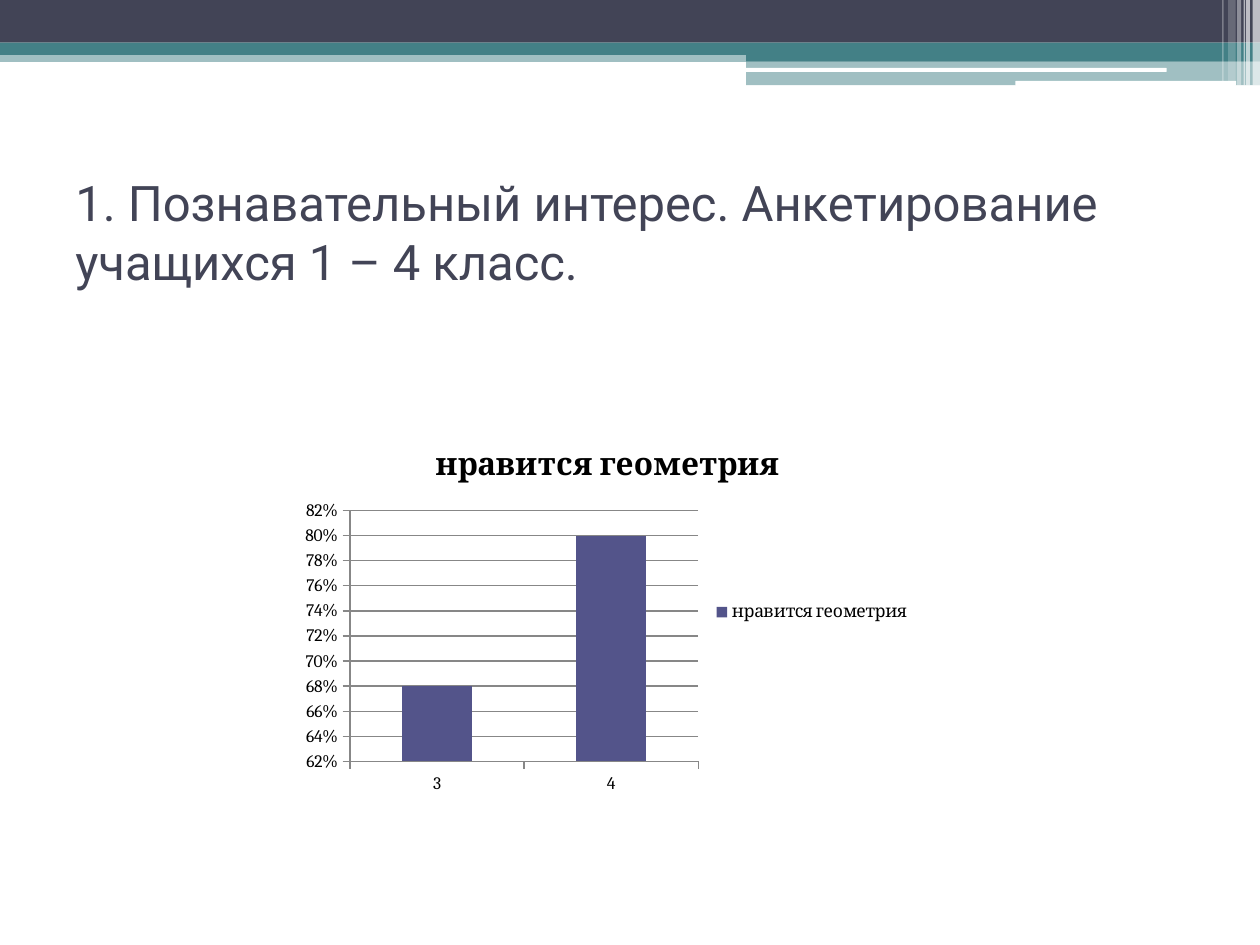
from dataclasses import dataclass

from lxml import etree
from pptx import Presentation, util as u
from pptx.chart.data import CategoryChartData
from pptx.dml.color import RGBColor
from pptx.enum import chart as ch, shapes, text
from pptx.oxml.ns import qn


@dataclass(frozen=True)
class Theme:
    dark: str = "424456"
    teal: str = "438086"
    white: str = "FFFFFF"
    black: str = "000000"
    bar: str = "53548A"
    grid: str = "878787"
    head: str = "Roboto"
    body: str = "Cambria"
    head_pt: int = 28
    name_pt: int = 18
    axis_pt: int = 10


T = Theme()


def rgb(code):
    return RGBColor.from_string(code)


def style(font, face, size, color, bold=False):
    font.name, font.size, font.bold = face, u.Pt(size), bold
    font.color.rgb = rgb(color)


def block(slide, box, color, alpha=100, kind=shapes.MSO_SHAPE.RECTANGLE):
    """Add a plain filled shape; alpha is its opacity in percent."""
    shape = slide.shapes.add_shape(kind, *map(u.Cm, box))
    shape.shadow.inherit = False
    shape.line.fill.background()
    shape.fill.solid()
    shape.fill.fore_color.rgb = rgb(color)
    if alpha < 100:
        tint = shape.fill._xPr.find(".//" + qn("a:srgbClr"))
        etree.SubElement(tint, qn("a:alpha")).set("val", str(alpha * 1000))


def banner(slide, x, y, w):
    """Stack the bands, the step on the right and the light stripes."""
    step, half = x + 15.04, w - 15.04
    block(slide, (x, y + 1.02, w, 0.23), T.teal, 50)
    block(slide, (x, y, w, 0.86), T.dark)
    block(slide, (x, y + 0.86, w, 0.25), T.teal)
    block(slide, (step, y + 0.99, half, 0.24), T.teal)
    block(slide, (step, y + 1.22, half, 0.5), T.teal, 50)
    for left, top, wide, high in ((15.01, 1.37, 8.51, 0.08),
                                  (20.47, 1.63, 4.45, 0.1)):
        block(slide, (x + left, y + top, wide, high), T.white,
              kind=shapes.MSO_SHAPE.ROUNDED_RECTANGLE)
    for gap, wide, high, alpha in (
            (0.15, 0.15, 1.73, 65), (0.28, 0.08, 1.73, 65),
            (0.33, 0.03, 1.73, 60), (0.46, 0.08, 1.73, 40),
            (0.64, 0.15, 1.63, 20), (0.76, 0.03, 1.63, 30)):
        block(slide, (x + w - gap, y, wide, high), T.white, alpha)


def title(slide, box, words):
    frame = slide.shapes.add_textbox(*map(u.Cm, box)).text_frame
    frame.word_wrap = True
    frame.vertical_anchor = text.MSO_ANCHOR.MIDDLE
    par = frame.paragraphs[0]
    par.text = words
    style(par.font, T.head, T.head_pt, T.dark)


def survey(slide, box, name, marks):
    """Draw the share of pupils by class as columns."""
    data = CategoryChartData(number_format="0%")
    data.categories = list(marks)
    data.add_series(name, marks.values())
    chart = slide.shapes.add_chart(
        ch.XL_CHART_TYPE.COLUMN_CLUSTERED, *map(u.Cm, box), data).chart
    style(chart.font, T.body, T.axis_pt, T.black)

    chart.has_title = True
    par = chart.chart_title.text_frame.paragraphs[0]
    par.text = name
    style(par.font, T.body, T.name_pt, T.black, True)
    chart.chart_title.include_in_layout = False

    chart.has_legend = True
    chart.legend.position = ch.XL_LEGEND_POSITION.RIGHT
    chart.legend.include_in_layout = False

    plot = chart.plots[0]
    plot.gap_width, plot.vary_by_categories = 150, False
    fill = plot.series[0].format.fill
    fill.solid()
    fill.fore_color.rgb = rgb(T.bar)

    rows = chart.value_axis
    rows.minimum_scale, rows.maximum_scale, rows.major_unit = 0.62, 0.82, 0.02
    rows.has_major_gridlines = True
    rows.tick_labels.number_format = "0%"
    rows.tick_labels.number_format_is_linked = False
    for axis in (rows, chart.category_axis):
        axis.major_tick_mark = ch.XL_TICK_MARK.OUTSIDE
    for part in (rows, chart.category_axis, rows.major_gridlines):
        part.format.line.color.rgb = rgb(T.grid)
        part.format.line.width = u.Pt(0.75)


def main():
    deck = Presentation()
    deck.slide_width, deck.slide_height = u.Cm(25.4), u.Cm(19.05)
    slide = deck.slides.add_slide(deck.slide_layouts[6])
    banner(slide, 0, 0, 25.4)
    title(slide, (1.27, 3.18, 22.86, 2.97),
          "1. Познавательный интерес. Анкетирование учащихся 1 – 4 класс.")
    survey(slide, (5.9, 8.53, 12.7, 7.62), "нравится геометрия",
           {"3": 0.68, "4": 0.8})
    deck.save("out.pptx")


if __name__ == "__main__":
    main()
